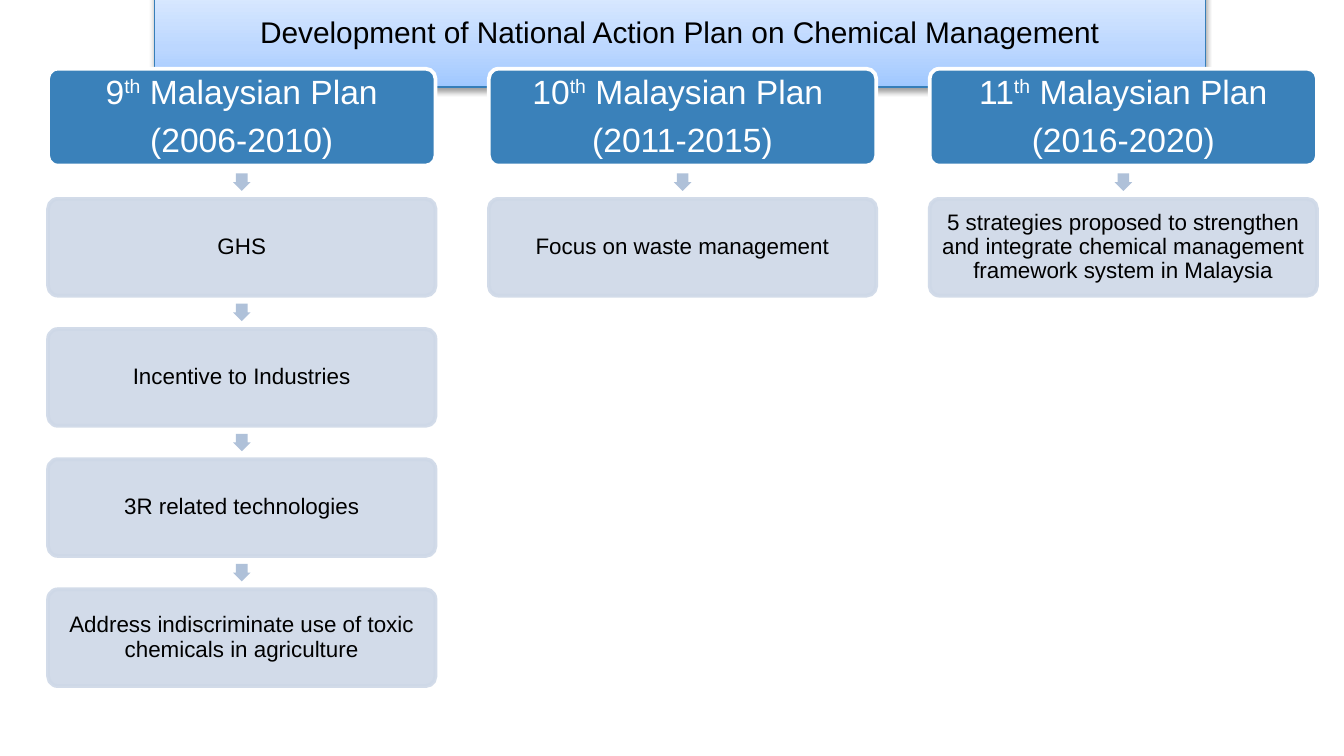
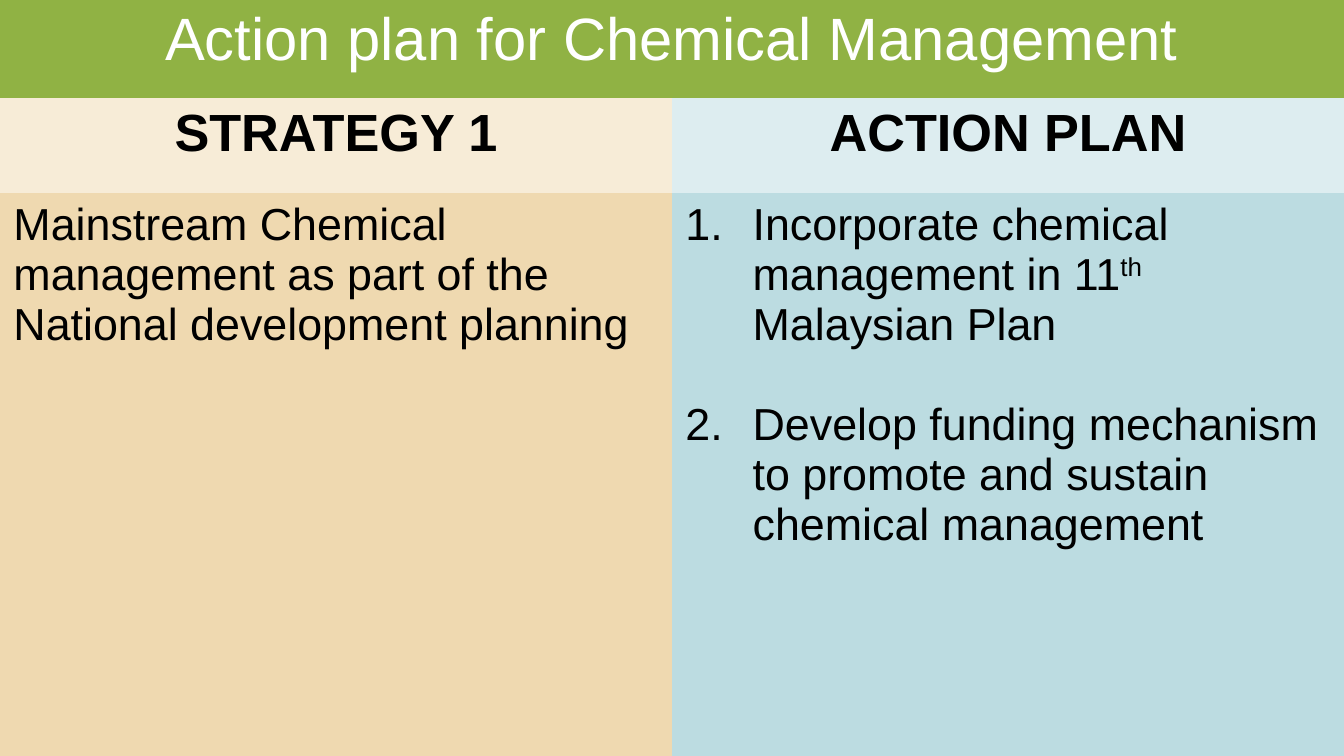
from dataclasses import dataclass
from typing import Any

from lxml import etree
from pptx import Presentation
from pptx.dml.color import RGBColor
from pptx.enum.shapes import MSO_SHAPE
from pptx.enum.text import MSO_ANCHOR, MSO_AUTO_SIZE, PP_ALIGN
from pptx.oxml.ns import qn
from pptx.util import Cm, Pt

ROUNDED = MSO_SHAPE.ROUNDED_RECTANGLE
ARROW = MSO_SHAPE.RIGHT_ARROW
CENTER = PP_ALIGN.CENTER
LEFT = PP_ALIGN.LEFT
MIDDLE = MSO_ANCHOR.MIDDLE
GROW = MSO_AUTO_SIZE.SHAPE_TO_FIT_TEXT
TITLE_ONLY, BLANK = 5, 6
NO_TABLE_STYLE = "{2D5ABB26-0587-4C30-8999-92F81FD0307C}"

COLORS = {
    "white": "FFFFFF", "black": "000000",
    "plan": "3A81BA", "step": "CED8E7", "arrow": "AFC1D9",
    "title_line": "367EB9", "title_low": "A0C8FF",
    "title_mid": "BCD7FF", "title_high": "E5F0FF",
    "banner": "90B244", "strategy_head": "F7ECD7", "action_head": "DDEDF0",
    "strategy": "EFD9B0", "action": "BCDCE1",
}

# Grid of the plan columns, in centimetres
GRID_LEFT, GRID_TOP = 0.91, 1.3
COLUMN_STEP, ROW_STEP = 8.33, 2.46
BOX_WIDTH, BOX_HEIGHT = 7.32, 1.83
ARROW_SIZE = 0.33


@dataclass(frozen=True)
class TextStyle:
    size: float
    color: str = "black"
    bold: bool = False
    align: Any = CENTER
    line_spacing: float = 1.0
    space_after: float = 0


@dataclass(frozen=True)
class BoxStyle:
    fill: str
    line: str
    text: TextStyle
    opacity: int = 100


@dataclass(frozen=True)
class Plan:
    heading: list[str]
    steps: list[str]


@dataclass(frozen=True)
class Entry:
    row: int
    column: int
    lines: list[str]
    fill: str
    text: TextStyle
    numbered: bool = False


TITLE_TEXT = TextStyle(16)
PLAN_BOX = BoxStyle("plan", "white", TextStyle(18, "white", line_spacing=0.9, space_after=6.3))
STEP_BOX = BoxStyle("step", "step", TextStyle(12, line_spacing=0.9, space_after=4.2), 90)
BANNER_TEXT = TextStyle(32, "white")
HEAD_TEXT = TextStyle(28, bold=True)
ENTRY_TEXT = TextStyle(24, align=LEFT)

# Text between carets is superscript
PLANS = [
    Plan(["9^th^ Malaysian Plan", "(2006-2010)"],
         ["GHS", "Incentive to Industries", "3R related technologies",
          "Address indiscriminate use of toxic chemicals in agriculture"]),
    Plan(["10^th^ Malaysian Plan ", "(2011-2015)"], ["Focus on waste management"]),
    Plan(["11^th^ Malaysian Plan", "(2016-2020)"],
         ["5 strategies proposed to strengthen and integrate chemical management "
          "framework system in Malaysia"]),
]

ENTRIES = [
    Entry(0, 0, ["Action plan for Chemical Management"], "banner", BANNER_TEXT),
    Entry(1, 0, ["STRATEGY 1"], "strategy_head", HEAD_TEXT),
    Entry(1, 1, ["ACTION PLAN"], "action_head", HEAD_TEXT),
    Entry(2, 0, ["Mainstream Chemical management as part of the National development planning"],
          "strategy", ENTRY_TEXT),
    Entry(2, 1, ["Incorporate chemical management in 11^th^ Malaysian Plan",
                 "Develop funding mechanism to promote and sustain chemical management"],
          "action", ENTRY_TEXT, numbered=True),
]


def rgb(name: str) -> RGBColor:
    return RGBColor.from_string(COLORS[name])


def apply(target: Any, values: dict[str, Any]) -> None:
    for attribute, value in values.items():
        setattr(target, attribute, value)


def paint(fill: Any, color: str) -> None:
    fill.solid()
    fill.fore_color.rgb = rgb(color)


def write(frame: Any, lines: list[str], style: TextStyle) -> None:
    """Write one paragraph per line, with superscripts."""
    for index, line in enumerate(lines):
        paragraph = frame.add_paragraph() if index else frame.paragraphs[0]
        apply(paragraph, {"alignment": style.align, "line_spacing": style.line_spacing,
                          "space_after": Pt(style.space_after)})
        for part, words in enumerate(line.split("^")):
            if not words:
                continue
            run = paragraph.add_run()
            run.text = words
            apply(run.font, {"name": "Arial", "size": Pt(style.size), "bold": style.bold})
            run.font.color.rgb = rgb(style.color)
            if part % 2:
                run._r.get_or_add_rPr().set("baseline", "30000")


def number(frame: Any) -> None:
    """Number the paragraphs, with one line of space between them."""
    for index, paragraph in enumerate(frame.paragraphs):
        if index:
            paragraph.space_before = Pt(27)
        properties = paragraph._p.get_or_add_pPr()
        properties.set("marL", str(Cm(1.27)))
        properties.set("indent", str(-Cm(1.27)))
        etree.SubElement(properties, qn("a:buFont"), typeface="+mj-lt")
        etree.SubElement(properties, qn("a:buAutoNum"), type="arabicPeriod")


def add_box(slide: Any, left: float, top: float, lines: list[str], style: BoxStyle) -> None:
    box = slide.shapes.add_shape(ROUNDED, Cm(left), Cm(top), Cm(BOX_WIDTH), Cm(BOX_HEIGHT))
    box.shadow.inherit = False
    box.adjustments[0] = 0.1
    paint(box.fill, style.fill)
    paint(box.line.fill, style.line)
    box.line.width = Pt(2)
    if style.opacity < 100:
        for color in box.element.spPr.iter(qn("a:srgbClr")):
            etree.SubElement(color, qn("a:alpha"), val=str(style.opacity * 1000))
    margins = dict.fromkeys(("margin_left", "margin_right", "margin_top", "margin_bottom"), Cm(0.1))
    apply(box.text_frame, {"word_wrap": True, "vertical_anchor": MIDDLE, **margins})
    write(box.text_frame, lines, style.text)


def add_arrow(slide: Any, left: float, top: float) -> None:
    arrow = slide.shapes.add_shape(ARROW, Cm(left), Cm(top), Cm(ARROW_SIZE), Cm(ARROW_SIZE))
    arrow.rotation = 90
    arrow.shadow.inherit = False
    arrow.adjustments[0] = 0.667
    paint(arrow.fill, "arrow")
    arrow.line.fill.background()


def format_title(title: Any) -> None:
    apply(title, {"left": Cm(2.92), "top": Cm(0.12), "width": Cm(19.86), "height": Cm(0.94)})
    apply(title.text_frame, {"word_wrap": True, "vertical_anchor": MIDDLE, "auto_size": GROW})
    write(title.text_frame, ["Development of National Action Plan on Chemical Management"], TITLE_TEXT)
    paint(title.line.fill, "title_line")
    title.line.width = Pt(0.75)

    # Gradient from bottom to top
    title.fill.gradient()
    title.fill.gradient_angle = 90
    stops = title.element.spPr.find(".//" + qn("a:gsLst"))
    for stop in list(stops):
        stops.remove(stop)
    for position, color in ((0, "title_low"), (35, "title_mid"), (100, "title_high")):
        stop = etree.SubElement(stops, qn("a:gs"), pos=str(position * 1000))
        etree.SubElement(stop, qn("a:srgbClr"), val=COLORS[color])

    # Soft shadow below
    effects = etree.SubElement(title.element.spPr, qn("a:effectLst"))
    shadow = etree.SubElement(effects, qn("a:outerShdw"), blurRad=str(Pt(3.1)),
                              dist=str(Pt(1.6)), dir="5400000", rotWithShape="0")
    color = etree.SubElement(shadow, qn("a:srgbClr"), val=COLORS["black"])
    etree.SubElement(color, qn("a:alpha"), val="38000")


def build_plans(deck: Any) -> None:
    slide = deck.slides.add_slide(deck.slide_layouts[TITLE_ONLY])
    format_title(slide.shapes.title)
    for column, plan in enumerate(PLANS):
        left = GRID_LEFT + column * COLUMN_STEP
        add_box(slide, left, GRID_TOP, plan.heading, PLAN_BOX)
        for row, step in enumerate(plan.steps, start=1):
            top = GRID_TOP + row * ROW_STEP
            gap = ROW_STEP - BOX_HEIGHT
            add_arrow(slide, left + (BOX_WIDTH - ARROW_SIZE) / 2, top - (gap + ARROW_SIZE) / 2)
            add_box(slide, left, top, [step], STEP_BOX)


def build_strategy(deck: Any) -> None:
    slide = deck.slides.add_slide(deck.slide_layouts[BLANK])
    frame = slide.shapes.add_table(3, 2, 0, 0, Cm(25.4), Cm(15.09))
    frame.element.find(".//" + qn("a:tableStyleId")).text = NO_TABLE_STYLE
    table = frame.table
    for row, height in zip(table.rows, (1.85, 1.8, 11.44)):
        row.height = Cm(height)
    table.cell(0, 0).merge(table.cell(0, 1))
    for entry in ENTRIES:
        cell = table.cell(entry.row, entry.column)
        paint(cell.fill, entry.fill)
        write(cell.text_frame, entry.lines, entry.text)
        if entry.numbered:
            number(cell.text_frame)


def main() -> None:
    deck = Presentation()
    apply(deck, {"slide_width": Cm(25.4), "slide_height": Cm(14.29)})
    build_plans(deck)
    build_strategy(deck)
    deck.save("out.pptx")


if __name__ == "__main__":
    main()
